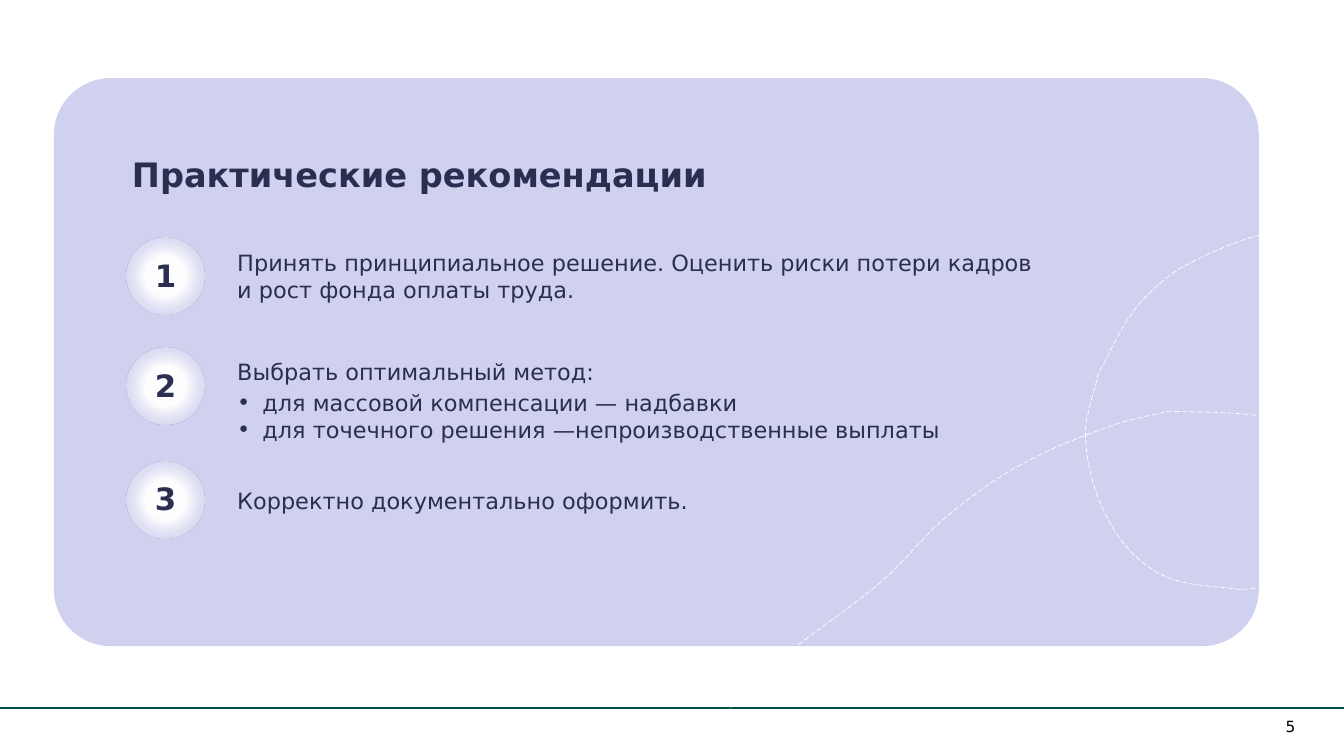
from lxml import etree
from pptx import Presentation
from pptx.dml.color import RGBColor
from pptx.enum.dml import MSO_LINE
from pptx.enum.shapes import MSO_CONNECTOR, MSO_SHAPE
from pptx.enum.text import MSO_AUTO_SIZE, PP_ALIGN
from pptx.oxml import parse_xml
from pptx.oxml.ns import nsdecls, qn
from pptx.util import Inches, Pt

LONG_DASH = MSO_LINE.LONG_DASH
STRAIGHT = MSO_CONNECTOR.STRAIGHT
OVAL, ROUNDED = MSO_SHAPE.OVAL, MSO_SHAPE.ROUNDED_RECTANGLE
LEFT, CENTER = PP_ALIGN.LEFT, PP_ALIGN.CENTER
FONT = "DejaVu Sans"
COLORS = {"card": "D0D0EF", "ink": "2A2F52", "rule": "004C3D",
          "white": "FFFFFF", "black": "000000"}

SLIDE_WIDTH, SLIDE_HEIGHT = 26.67, 15
CARD = (1.07, 1.55, 23.91, 11.27)
CIRCLE_SIZE = 1.53
BULLET = "• "

# Circle top in the card, text top from the circle, text height, paragraphs
STEPS = [
    (3.17, 0.18, 1.18, ["Принять принципиальное решение. Оценить риски потери кадров \n"
                        "и рост фонда оплаты труда."]),
    (5.34, 0.17, 1.8, ["Выбрать оптимальный метод:",
                       BULLET + "для массовой компенсации — надбавки",
                       BULLET + "для точечного решения —непроизводственные выплаты"]),
    (7.6, 0.47, 0.64, ["Корректно документально оформить."]),
]

# Dashed ribbon: box, start point, Bezier segments (two controls and an end), end
RIBBON_BOX = (8.76, 4.27, 20.15, 13.09)
RIBBON_START = (28.91, 4.38)
RIBBON_CURVES = [
    (27.93, 4.19, 28.35, 4.26, 26.11, 4.46), (25.38, 4.52, 24.64, 4.73, 23.98, 5.04),
    (23.69, 5.18, 23.38, 5.32, 23.13, 5.53), (22.35, 6.17, 22.25, 6.57, 21.79, 7.43),
    (21.71, 7.81, 21.55, 8.19, 21.54, 8.58), (21.54, 9.36, 21.86, 10.28, 22.37, 10.87),
    (22.6, 11.13, 22.9, 11.36, 23.23, 11.48), (23.68, 11.64, 24.17, 11.63, 24.64, 11.7),
    (25.49, 11.57, 26, 11.78, 26.4, 11.02), (26.52, 10.78, 26.54, 10.5, 26.62, 10.24),
    (26.61, 9.98, 26.67, 9.72, 26.59, 9.48), (26.41, 8.89, 25.95, 8.52, 25.37, 8.33),
    (24.83, 8.16, 23.74, 8.18, 23.18, 8.16), (22.82, 8.25, 22.45, 8.31, 22.11, 8.43),
    (20.79, 8.89, 19.99, 9.27, 18.89, 10.16), (18.38, 10.57, 17.99, 11.1, 17.5, 11.53),
    (16.66, 12.26, 15.66, 12.81, 14.91, 13.63), (14.5, 14.07, 14.02, 14.47, 13.67, 14.97),
    (12.77, 16.23, 14.22, 14.24, 12.76, 15.97), (12.71, 16.03, 12.39, 16.44, 12.23, 16.58),
    (12.12, 16.67, 11.86, 16.82, 11.76, 16.87), (11.56, 16.97, 11.34, 17.05, 11.13, 17.14),
    (11.04, 17.18, 10.96, 17.25, 10.86, 17.26), (10.28, 17.33, 10.6, 17.3, 9.91, 17.36),
]
RIBBON_END = (8.76, 17.33)


def rgb(name):
    return RGBColor.from_string(COLORS[name])


def add_text(shapes, box, paragraphs, size=32, color="ink", bold=False, align=LEFT,
             line_spacing=None, inset=None, wrap=True):
    text_box = shapes.add_textbox(*map(Inches, box))
    frame = text_box.text_frame
    frame.word_wrap = wrap
    frame.auto_size = MSO_AUTO_SIZE.SHAPE_TO_FIT_TEXT
    if inset is not None:
        frame.margin_left = frame.margin_right = Inches(inset)
        frame.margin_top = frame.margin_bottom = Inches(inset)
    for index, text in enumerate(paragraphs):
        paragraph = frame.add_paragraph() if index else frame.paragraphs[0]
        paragraph.text = text.removeprefix(BULLET)
        paragraph.alignment = align
        if line_spacing:
            paragraph.line_spacing = line_spacing
        if text.startswith(BULLET):
            if not paragraphs[index - 1].startswith(BULLET):
                paragraph.space_before = Pt(6)
            add_bullet(paragraph)
        for font in [paragraph.font] + [run.font for run in paragraph.runs]:
            font.name, font.size, font.bold = FONT, Pt(size), bold
            font.color.rgb = rgb(color)


def add_bullet(paragraph):
    properties = paragraph._p.get_or_add_pPr()
    properties.set("marL", str(Inches(0.5)))
    properties.set("indent", str(-Inches(0.5)))
    etree.SubElement(properties, qn("a:buFont")).set("typeface", FONT)
    etree.SubElement(properties, qn("a:buChar")).set("char", BULLET.strip())


def add_plain_shape(shapes, kind, box, color):
    shape = shapes.add_shape(kind, *map(Inches, box))
    shape.shadow.inherit = False
    shape.fill.solid()
    shape.fill.fore_color.rgb = rgb(color)
    shape.line.fill.background()
    return shape


def apply_glow(shape):
    """Replace the solid fill by a radial one that fades out at the rim."""
    gradient = parse_xml(
        f'<a:gradFill {nsdecls("a")} rotWithShape="1"><a:gsLst>'
        f'<a:gs pos="36000"><a:srgbClr val="{COLORS["white"]}"/></a:gs>'
        f'<a:gs pos="100000"><a:srgbClr val="{COLORS["card"]}"><a:alpha val="0"/></a:srgbClr></a:gs>'
        '</a:gsLst><a:path path="circle">'
        '<a:fillToRect l="50000" t="50000" r="50000" b="50000"/></a:path></a:gradFill>')
    solid = shape._element.spPr.find(qn("a:solidFill"))
    solid.getparent().replace(solid, gradient)


def add_step(slide, left, top, number, text_offset, text_height, paragraphs):
    shapes = slide.shapes.add_group_shape().shapes
    apply_glow(add_plain_shape(shapes, OVAL, (left, top, CIRCLE_SIZE, CIRCLE_SIZE), "white"))
    add_text(shapes, (left + 0.28, top + 0.47, 0.97, 0.69), [str(number)],
             size=44, bold=True, align=CENTER, line_spacing=0.8)
    add_text(shapes, (left + 2.09, top + text_offset, 18.17, text_height), paragraphs)


def bend_outline(shape, box, start, curves, end):
    """Turn the straight segments of a freeform into Bezier segments."""
    left, top, width, height = map(Inches, box)
    shape.left, shape.top, shape.width, shape.height = left, top, width, height
    outline = next(shape._element.iter(qn("a:path")))
    outline.set("w", str(width))
    outline.set("h", str(height))
    for segment in list(outline):
        outline.remove(segment)
    segments = [("a:moveTo", start), *(("a:cubicBezTo", curve) for curve in curves),
                ("a:lnTo", end)]
    for tag, numbers in segments:
        segment = etree.SubElement(outline, qn(tag))
        for x, y in zip(numbers[::2], numbers[1::2]):
            point = etree.SubElement(segment, qn("a:pt"))
            point.set("x", str(Inches(x) - left))
            point.set("y", str(Inches(y) - top))


def add_ribbon(slide):
    nodes = [curve[4:] for curve in RIBBON_CURVES] + [RIBBON_END]
    builder = slide.shapes.build_freeform(*map(Inches, RIBBON_START))
    builder.add_line_segments([(Inches(x), Inches(y)) for x, y in nodes], close=False)
    ribbon = builder.convert_to_shape()
    bend_outline(ribbon, RIBBON_BOX, RIBBON_START, RIBBON_CURVES, RIBBON_END)
    ribbon.shadow.inherit = False
    ribbon.fill.background()
    ribbon.line.color.rgb = rgb("white")
    ribbon.line.width = Pt(1)
    ribbon.line.dash_style = LONG_DASH


def add_card(slide, box):
    left, top = box[:2]
    card = add_plain_shape(slide.shapes, ROUNDED, box, "card")
    card.adjustments[0] = 0.1
    add_ribbon(slide)
    add_text(slide.shapes, (left + 1.45, top + 1.6, 13.35, 0.75),
             ["Практические рекомендации"], size=48, bold=True, line_spacing=0.8)
    for number, (offset, *content) in enumerate(STEPS, start=1):
        add_step(slide, left + 1.45, top + offset, number, *content)


def add_footer(slide, top):
    y = Inches(top)
    rule = slide.shapes.add_connector(STRAIGHT, 0, y, Inches(SLIDE_WIDTH), y)
    rule.line.color.rgb = rgb("rule")
    rule.line.width = Pt(2)
    etree.SubElement(rule._element.spPr, qn("a:effectLst"))
    add_text(slide.shapes, (25.45, top + 0.12, 0.32, 0.49), ["5"], size=22,
             color="black", align=CENTER, inset=0.06, wrap=False)


def main():
    presentation = Presentation()
    presentation.slide_width = Inches(SLIDE_WIDTH)
    presentation.slide_height = Inches(SLIDE_HEIGHT)
    slide = presentation.slides.add_slide(presentation.slide_layouts[6])
    add_footer(slide, 14.05)
    add_card(slide, CARD)
    presentation.save("out.pptx")


if __name__ == "__main__":
    main()
